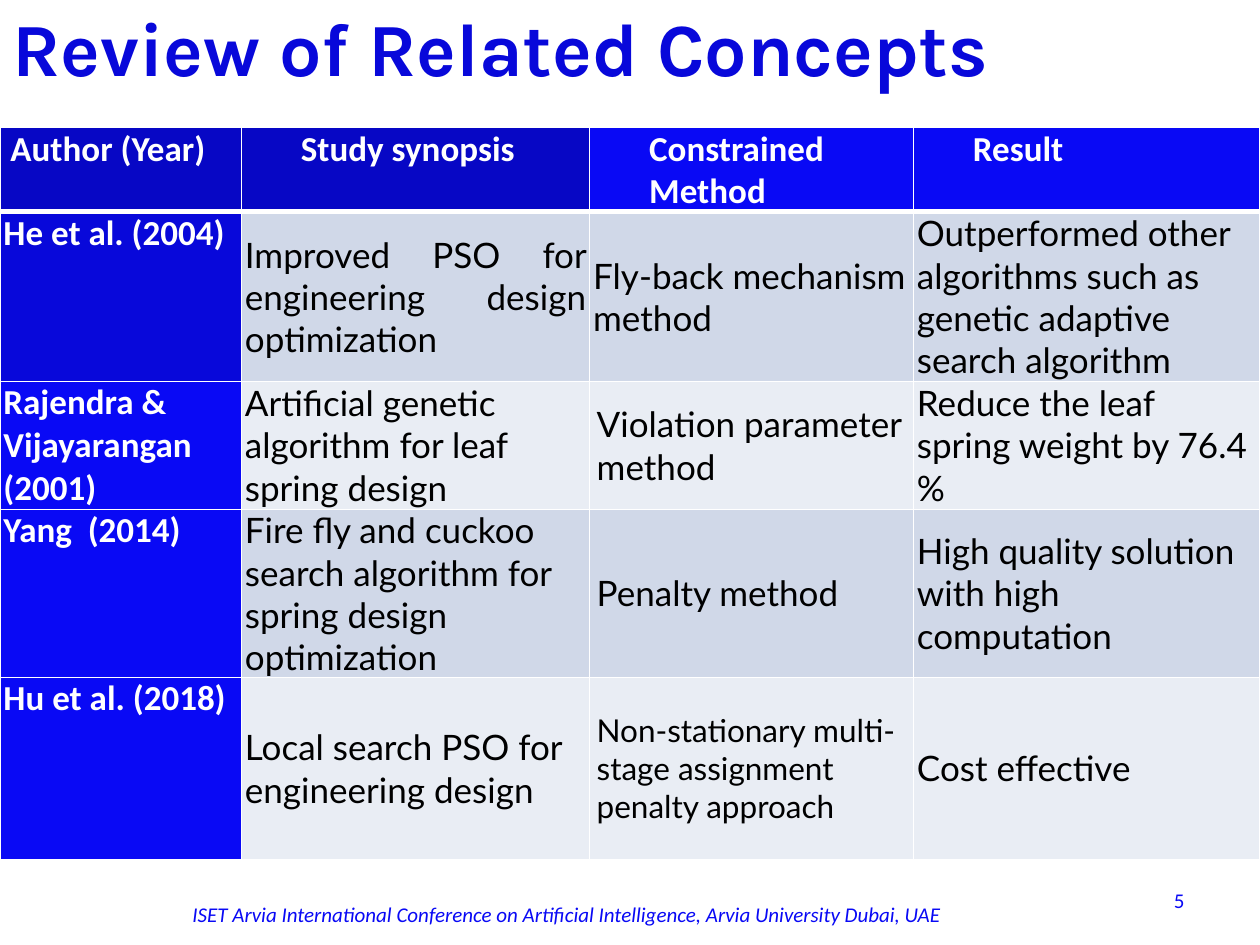
from lxml.etree import SubElement
from pptx import Presentation
from pptx.dml.color import RGBColor
from pptx.enum.text import MSO_ANCHOR, PP_ALIGN
from pptx.oxml.ns import qn
from pptx.util import Pt

COLORS = {
    "white": "FFFFFF", "black": "000000", "navy": "0707C5", "title": "0808DA",
    "blue": "0909F5", "band_dark": "D0D8E8", "band_light": "E9EDF4",
}
COLUMN_WIDTHS = [138, 199, 185, 198]
ROW_HEIGHTS = [47, 97, 73, 96, 104]
HEADERS = ["Author (Year)", "Study synopsis", "Constrained Method", "Result"]
HEADER_FILLS = ["navy", "navy", "blue", "blue"]
STUDIES = [
    ["He et al. (2004)", "Improved PSO for engineering design optimization",
     "Fly-back mechanism method",
     "Outperformed other algorithms such as genetic adaptive search algorithm"],
    ["Rajendra & Vijayarangan (2001)",
     "Artificial genetic algorithm for leaf spring design",
     "Violation parameter method", "Reduce the leaf spring weight by 76.4 %"],
    ["Yang  (2014)",
     "Fire fly and cuckoo search algorithm for spring design optimization",
     "Penalty method", "High quality solution with high computation"],
    ["Hu et al. (2018)", "Local search PSO for engineering design",
     "Non-stationary multi-stage assignment penalty approach", "Cost effective"],
]


def rgb(name):
    return RGBColor.from_string(COLORS[name])


def style_font(font, name, size, color, bold=False, italic=False):
    font.name, font.size = name, Pt(size)
    font.bold, font.italic = bold, italic
    font.color.rgb = rgb(color)


def place(shape, box):
    shape.left, shape.top, shape.width, shape.height = (Pt(value) for value in box)


def add_title(slide, box, text):
    title = slide.shapes.title
    place(title, box)
    frame = title.text_frame
    frame.text = text
    frame.vertical_anchor = MSO_ANCHOR.TOP
    paragraph = frame.paragraphs[0]
    paragraph.alignment = PP_ALIGN.LEFT
    style_font(paragraph.font, "Karla", 42.9, "title", bold=True)


def add_footer_text(slide, box, text, alignment, italic=False):
    frame = slide.shapes.add_textbox(*(Pt(value) for value in box)).text_frame
    frame.word_wrap = True
    frame.vertical_anchor = MSO_ANCHOR.MIDDLE
    paragraph = frame.paragraphs[0]
    paragraph.text = text
    paragraph.alignment = alignment
    style_font(paragraph.font, "Calibri", 12, "blue", italic=italic)


def add_borders(cell, **widths):
    """Draw white borders; they must precede the fill in the cell properties."""
    properties = cell._tc.get_or_add_tcPr()
    for side in ("lnL", "lnR", "lnT", "lnB"):
        line = SubElement(properties, qn(f"a:{side}"), w=str(Pt(widths.get(side, 1))))
        fill = SubElement(line, qn("a:solidFill"))
        SubElement(fill, qn("a:srgbClr"), val=COLORS["white"])


def fill_cell(cell, text, fill, alignment=PP_ALIGN.LEFT, indent=0):
    cell.margin_left = cell.margin_right = Pt(2)
    cell.margin_top = cell.margin_bottom = 0
    cell.fill.solid()
    cell.fill.fore_color.rgb = rgb(fill)
    paragraph = cell.text_frame.paragraphs[0]
    paragraph.text = text
    paragraph.alignment = alignment
    paragraph._p.get_or_add_pPr().set("marL", str(Pt(indent)))
    return paragraph


def add_study_table(slide, box):
    table = slide.shapes.add_table(
        len(ROW_HEIGHTS), len(COLUMN_WIDTHS), *(Pt(value) for value in box)).table
    for column, width in zip(table.columns, COLUMN_WIDTHS):
        column.width = Pt(width)
    for row, height in zip(table.rows, ROW_HEIGHTS):
        row.height = Pt(height)

    # Header row
    for index, (text, fill) in enumerate(zip(HEADERS, HEADER_FILLS)):
        cell = table.cell(0, index)
        add_borders(cell, lnB=3)
        alignment = PP_ALIGN.JUSTIFY if index else PP_ALIGN.LEFT
        paragraph = fill_cell(cell, text, fill, alignment, 32 if index else 4)
        style_font(paragraph.font, "Calibri", 20, "white", bold=True)

    # Study rows: a blue author column and banded details
    for row, study in enumerate(STUDIES, start=1):
        band = "band_dark" if row % 2 else "band_light"
        for index, text in enumerate(study):
            cell = table.cell(row, index)
            add_borders(cell, lnT=3 if row == 1 else 1)
            if index == 0:
                paragraph = fill_cell(cell, text, "title" if row == 1 else "blue")
                style_font(paragraph.font, "Calibri", 20, "white", bold=True)
                continue
            cell.vertical_anchor = MSO_ANCHOR.MIDDLE
            justified = (row, index) == (1, 1)
            paragraph = fill_cell(
                cell, text, band,
                PP_ALIGN.JUSTIFY if justified else PP_ALIGN.LEFT,
                2 if index == 2 and row > 1 else 0)
            size = 18 if (row, index) == (4, 2) else 20
            style_font(paragraph.font, "Lato", size, "black")


def main():
    presentation = Presentation()
    presentation.slide_width, presentation.slide_height = Pt(720), Pt(540)
    slide = presentation.slides.add_slide(presentation.slide_layouts[5])

    # Footer and slide number
    add_footer_text(slide, (36, 510, 576, 25),
                    "ISET Arvia International Conference on Artificial Intelligence, "
                    "Arvia University Dubai, UAE", PP_ALIGN.CENTER, italic=True)
    add_footer_text(slide, (516, 500, 168, 29), "5", PP_ALIGN.RIGHT)

    add_study_table(slide, (0, 73, 720, sum(ROW_HEIGHTS)))
    add_title(slide, (0, -3, 648, 56), "Review of Related Concepts")
    presentation.save("out.pptx")


if __name__ == "__main__":
    main()
